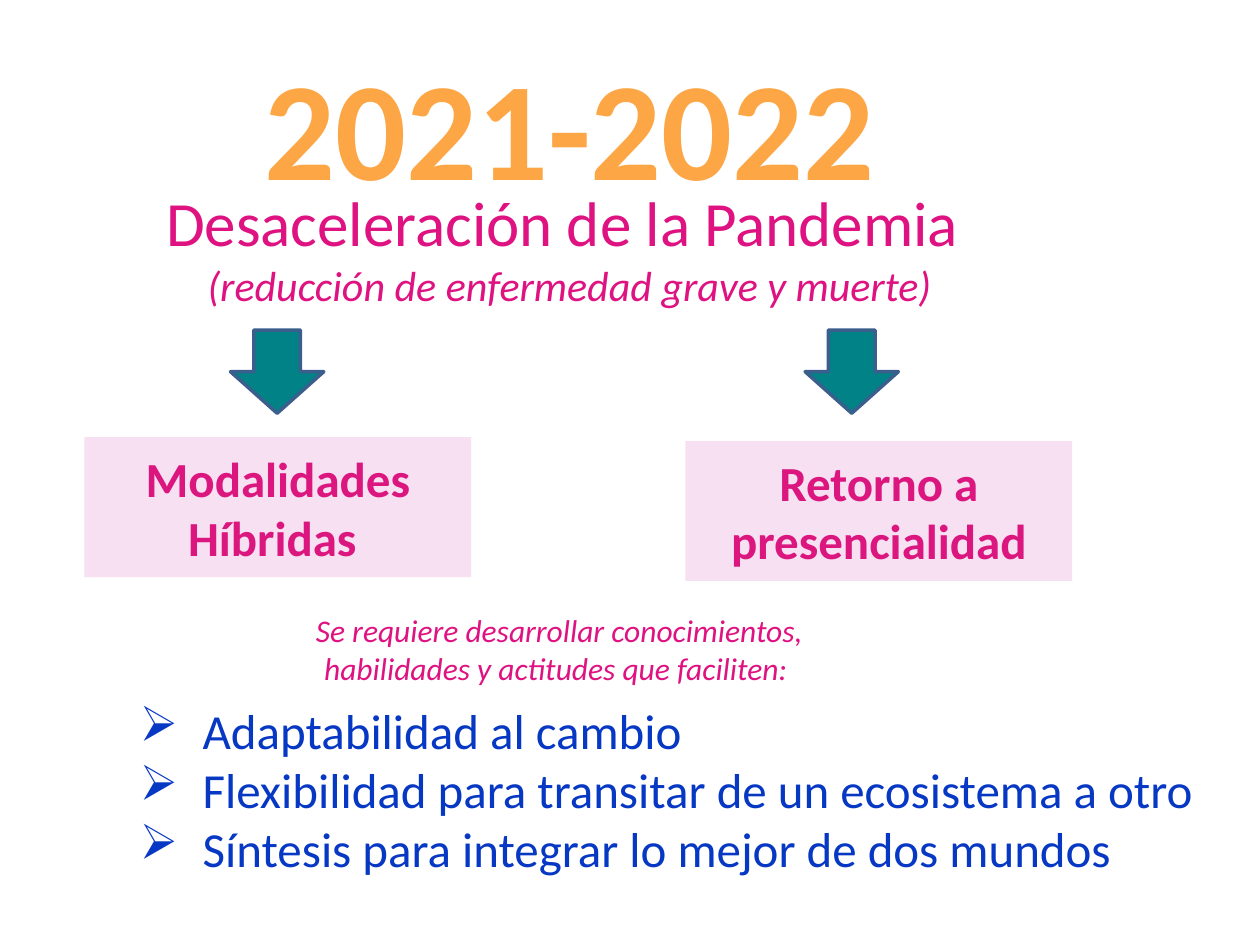
from dataclasses import dataclass, field

from lxml.etree import SubElement
from pptx import Presentation
from pptx.dml.color import RGBColor
from pptx.enum.shapes import MSO_SHAPE as Shape
from pptx.enum.text import MSO_ANCHOR as Anchor, MSO_AUTO_SIZE as AutoSize, PP_ALIGN as Align
from pptx.oxml.ns import qn
from pptx.util import Inches, Pt

COLUMNS, ROWS = 100, 75


def color(value):
    return RGBColor.from_string(value)


@dataclass
class Board:
    """Hold the style and the current slide, placing elements on a 100 by 75 grid."""

    deck: object
    slide: object
    font: str = "Calibri"
    formats: dict = field(default_factory=lambda: {
        "year": {"size": Pt(80), "bold": True, "ink": "FDA646"},
        "headline": {"size": Pt(36), "ink": "DF1281"},
        "remark": {"size": Pt(24), "italic": True, "ink": "DF1281"},
        "mode": {"size": Pt(28), "bold": True, "ink": "DB167E"},
        "lead": {"size": Pt(18), "italic": True, "ink": "DF1281"},
        "skill": {"size": Pt(28), "ink": "0738C4"},
    })

    def area(self, left, top, width, height):
        across, down = self.deck.slide_width / COLUMNS, self.deck.slide_height / ROWS
        return [round(n) for n in (left * across, top * down, width * across, height * down)]

    def set_lines(self, box, lines, anchor=Anchor.TOP, align=Align.CENTER, bullet=None):
        frame = box.text_frame
        settings = {"word_wrap": True, "auto_size": AutoSize.NONE, "vertical_anchor": anchor}
        for name, value in settings.items():
            setattr(frame, name, value)
        for index, (text, style) in enumerate(lines):
            para = frame.add_paragraph() if index else frame.paragraphs[0]
            para.alignment = align
            if bullet:
                self.mark(para, bullet)
            span = para.add_run()
            span.text = text
            span.font.name = self.font
            for name, value in self.formats[style].items():
                if name == "ink":
                    span.font.color.rgb = color(value)
                else:
                    setattr(span.font, name, value)

    def mark(self, para, bullet):
        properties = para._p.get_or_add_pPr()
        properties.set("marL", str(Inches(0.5)))
        properties.set("indent", str(-Inches(0.5)))
        SubElement(properties, qn("a:buChar")).set("char", bullet)

    def text(self, place, lines, **options):
        self.set_lines(self.slide.shapes.add_textbox(*self.area(*place)), lines, **options)

    def panel(self, box, text):
        box.fill.solid()
        box.fill.fore_color.rgb = color("F6E0F1")
        box.line.fill.background()
        self.set_lines(box, [(text, "mode")], anchor=Anchor.MIDDLE)

    def title(self, place, text):
        box = self.slide.shapes.title
        box.left, box.top, box.width, box.height = self.area(*place)
        self.panel(box, text)

    def mode(self, place, text):
        box = self.slide.shapes.add_shape(Shape.RECTANGLE, *self.area(*place))
        box.shadow.inherit = False
        self.panel(box, text)

    def arrow(self, place):
        arrow = self.slide.shapes.add_shape(Shape.DOWN_ARROW, *self.area(*place))
        arrow.shadow.inherit = False
        arrow.fill.solid()
        arrow.fill.fore_color.rgb = color("008287")
        arrow.line.color.rgb = color("3A5F8C")
        arrow.line.width = Pt(2)


def main():
    deck = Presentation()
    deck.slide_width, deck.slide_height = Inches(10), Inches(7.5)
    board = Board(deck, deck.slides.add_slide(deck.slide_layouts[5]))
    board.title((6.7, 34.7, 30.7, 11.1), "Modalidades Híbridas ")
    board.text((5.1, 14.1, 80.2, 11.1), [
        ("Desaceleración de la Pandemia ", "headline"),
        ("(reducción de enfermedad grave y muerte)", "remark"),
    ])
    skills = (
        "Adaptabilidad al cambio",
        "Flexibilidad para transitar de un ecosistema a otro",
        "Síntesis para integrar lo mejor de dos mundos",
    )
    board.text((10.1, 55.1, 85.9, 15.1), [(skill, "skill") for skill in skills],
               align=Align.LEFT, bullet="➢")
    for left in (63.9, 18.3):
        board.arrow((left, 26.2, 7.4, 6.6))
    board.text((11.2, 4.3, 68.1, 11.1), [("2021-2022", "year")], anchor=Anchor.MIDDLE)
    board.mode((54.4, 35, 30.7, 11.1), "Retorno a presencialidad")
    board.text((19.4, 48, 50, 7.1), [
        ("Se requiere desarrollar conocimientos, habilidades y actitudes que faciliten: ", "lead"),
    ])
    deck.save("out.pptx")


if __name__ == "__main__":
    main()
